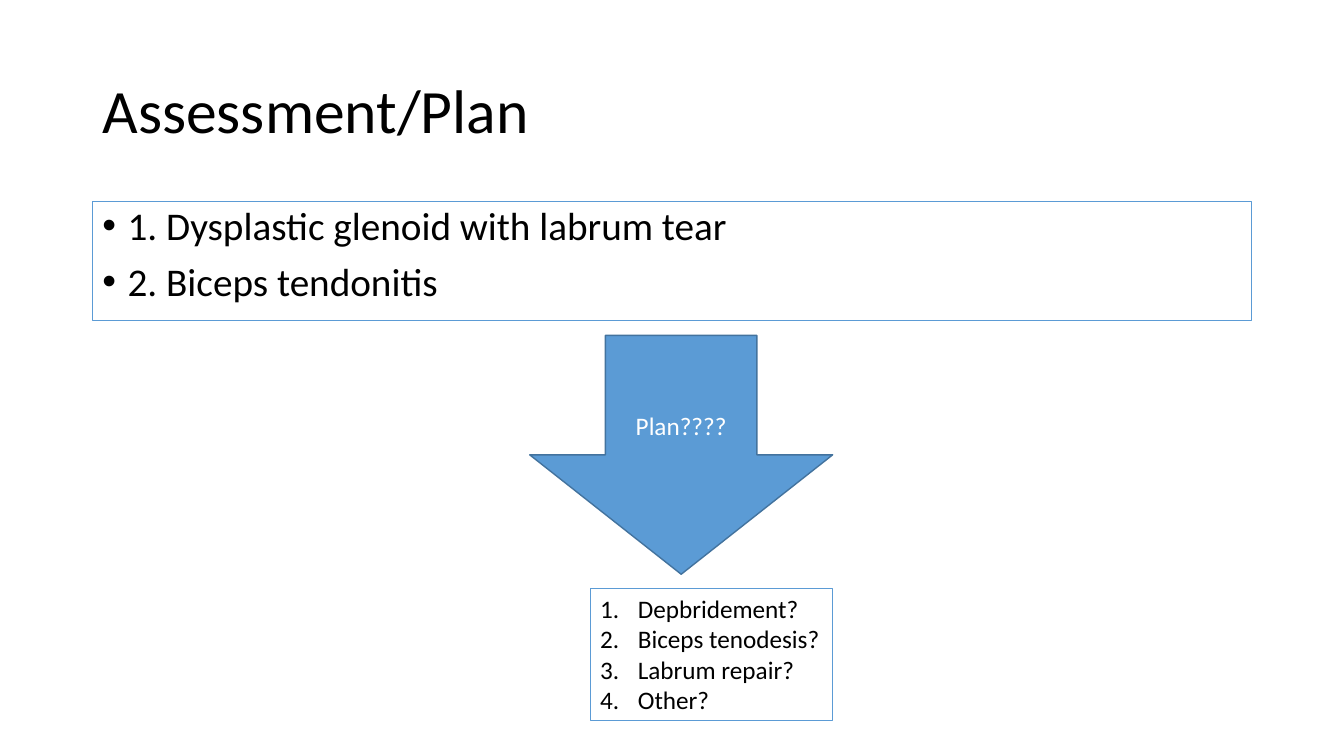
from dataclasses import dataclass
from typing import Any, Optional

from lxml import etree
from pptx import Presentation
from pptx.dml import color as dml
from pptx.enum import shapes, text
from pptx.oxml import ns
from pptx.util import Pt

FONT = "Calibri"
BLACK, WHITE, BLUE, DARK_BLUE = "000000", "FFFFFF", "5B9BD5", "43739E"


@dataclass(frozen=True)
class Box:
    left: float
    top: float
    width: float
    height: float

    def lengths(self) -> tuple:
        return Pt(self.left), Pt(self.top), Pt(self.width), Pt(self.height)


@dataclass(frozen=True)
class TextStyle:
    size: float
    colour: str = BLACK
    align: Any = text.PP_ALIGN.LEFT
    anchor: Any = text.MSO_ANCHOR.TOP
    wrap: bool = True
    line_spacing: float = 1.0
    space_before: float = 0
    indent: float = 0
    marker: Optional[tuple[str, str, str]] = None


TITLE = TextStyle(44, anchor=text.MSO_ANCHOR.MIDDLE, line_spacing=0.9)
FINDINGS = TextStyle(28, line_spacing=0.9, space_before=10, indent=18,
                     marker=("a:buChar", "char", "•"))
PLAN = TextStyle(18, WHITE, text.PP_ALIGN.CENTER, text.MSO_ANCHOR.MIDDLE)
OPTIONS = TextStyle(18, wrap=False, indent=27,
                    marker=("a:buAutoNum", "type", "arabicPeriod"))


def rgb(value: str) -> dml.RGBColor:
    return dml.RGBColor.from_string(value)


def place(shape: Any, box: Box) -> None:
    shape.left, shape.top, shape.width, shape.height = box.lengths()


def outline(shape: Any, colour: str, width: float) -> None:
    shape.line.color.rgb = rgb(colour)
    shape.line.width = Pt(width)


def set_marker(paragraph: Any, style: TextStyle) -> None:
    properties = paragraph._p.get_or_add_pPr()
    properties.set("marL", str(Pt(style.indent)))
    properties.set("indent", str(-Pt(style.indent)))
    if style.marker:
        tag, attribute, value = style.marker
        font = etree.SubElement(properties, ns.qn("a:buFont"))
        font.set("typeface", "Arial" if tag == "a:buChar" else "+mj-lt")
        etree.SubElement(properties, ns.qn(tag)).set(attribute, value)


def write(shape: Any, lines: list[str], style: TextStyle) -> None:
    frame = shape.text_frame
    frame.auto_size = text.MSO_AUTO_SIZE.NONE
    frame.word_wrap = style.wrap
    frame.vertical_anchor = style.anchor
    for index, line in enumerate(lines):
        paragraph = frame.add_paragraph() if index else frame.paragraphs[0]
        paragraph.alignment = style.align
        paragraph.line_spacing = style.line_spacing
        paragraph.space_before = Pt(style.space_before)
        set_marker(paragraph, style)
        run = paragraph.add_run()
        run.text = line
        run.font.name = FONT
        run.font.size = Pt(style.size)
        run.font.color.rgb = rgb(style.colour)


def main() -> None:
    deck = Presentation()
    deck.slide_width, deck.slide_height = Pt(960), Pt(540)
    slide = deck.slides.add_slide(deck.slide_layouts[1])

    title, findings = slide.placeholders
    place(title, Box(66, 28.75, 828, 104.4))
    write(title, ["Assessment/Plan"], TITLE)

    place(findings, Box(66, 143.75, 828, 85.4))
    outline(findings, BLUE, 0.75)
    write(findings, ["1. Dysplastic glenoid with labrum tear", "2. Biceps tendonitis"], FINDINGS)

    plan = slide.shapes.add_shape(shapes.MSO_SHAPE.DOWN_ARROW, *Box(378.4, 239.6, 216.4, 170.6).lengths())
    plan.shadow.inherit = False
    plan.fill.solid()
    plan.fill.fore_color.rgb = rgb(BLUE)
    outline(plan, DARK_BLUE, 1)
    write(plan, ["Plan????"], PLAN)

    options = slide.shapes.add_textbox(*Box(421.5, 420.3, 173.1, 94.5).lengths())
    outline(options, BLUE, 0.75)
    write(options, ["Depbridement?", "Biceps tenodesis?", "Labrum repair?", "Other?"], OPTIONS)
    options.text_frame.auto_size = text.MSO_AUTO_SIZE.SHAPE_TO_FIT_TEXT

    deck.save("out.pptx")


if __name__ == "__main__":
    main()
